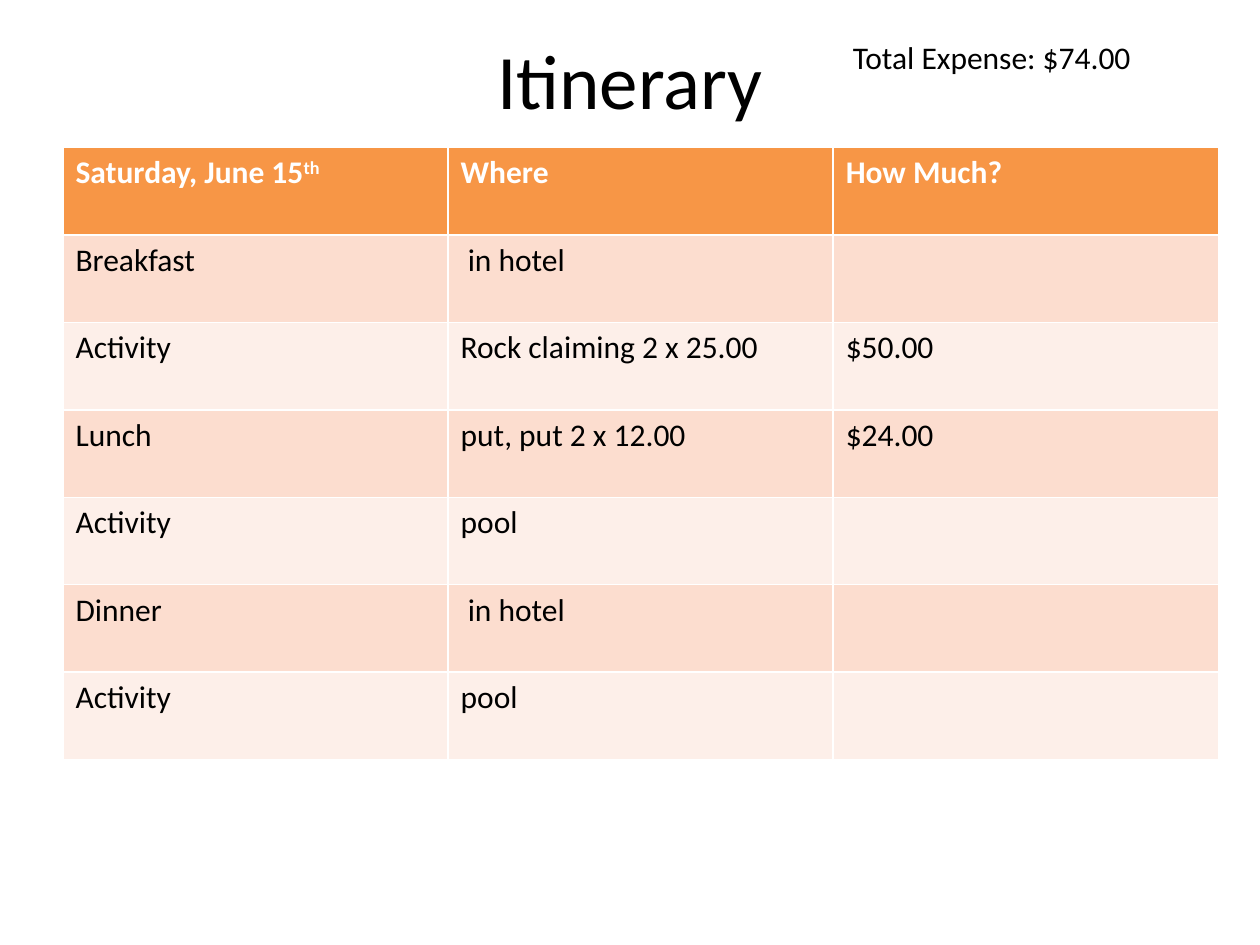
"""Build the Saturday itinerary slide with its expense table."""
import pptx
import pptx.dml.color
import pptx.enum.text
import pptx.util

Inches = pptx.util.Inches
COLORS = {"text": "000000", "white": "FFFFFF", "head": "F79646",
          "odd": "FCDDCF", "even": "FDEFE9"}
ROWS = [
    ("Saturday, June 15", "Where", "How Much?"),
    ("Breakfast", " in hotel", ""),
    ("Activity", "Rock claiming 2 x 25.00", "$50.00"),
    ("Lunch", "put, put 2 x 12.00", "$24.00"),
    ("Activity", "pool", ""),
    ("Dinner", " in hotel", ""),
    ("Activity", "pool", ""),
]


def color(name):
    return pptx.dml.color.RGBColor.from_string(COLORS[name])


def style(para, size, name="text", bold=False):
    for run in para.runs:
        run.font.name = "Calibri"
        run.font.size = pptx.util.Pt(size)
        run.font.bold = bold
        run.font.color.rgb = color(name)


deck = pptx.Presentation()
deck.slide_width, deck.slide_height = Inches(10), Inches(7.5)
slide = deck.slides.add_slide(deck.slide_layouts[5])

title = slide.shapes.title
title.left, title.top = Inches(0.5), Inches(0)
title.width, title.height = Inches(9), Inches(1.25)
title.text_frame.text = "Itinerary"
title.text_frame.vertical_anchor = pptx.enum.text.MSO_ANCHOR.MIDDLE
head = title.text_frame.paragraphs[0]
head.alignment = pptx.enum.text.PP_ALIGN.CENTER
style(head, 44)

total = slide.shapes.add_textbox(Inches(6.67), Inches(0.25), Inches(3.08), Inches(0.4))
total.text_frame.word_wrap = True
total.text_frame.auto_size = pptx.enum.text.MSO_AUTO_SIZE.SHAPE_TO_FIT_TEXT
total.text_frame.text = "Total Expense: $74.00"
style(total.text_frame.paragraphs[0], 18)

table = slide.shapes.add_table(len(ROWS), len(ROWS[0]), Inches(0.5), Inches(1.17),
                               Inches(9.17), Inches(4.86)).table
for i, row in enumerate(ROWS):
    fill = "head" if i == 0 else "odd" if i % 2 else "even"
    for j, text in enumerate(row):
        cell = table.cell(i, j)
        cell.fill.solid()
        cell.fill.fore_color.rgb = color(fill)
        para = cell.text_frame.paragraphs[0]
        para.text = text
        if i == j == 0:
            suffix = para.add_run()
            suffix.text = "th"
            suffix.font._element.set("baseline", "30000")
        style(para, 18, "text" if i else "white", i == 0)

deck.save("out.pptx")
